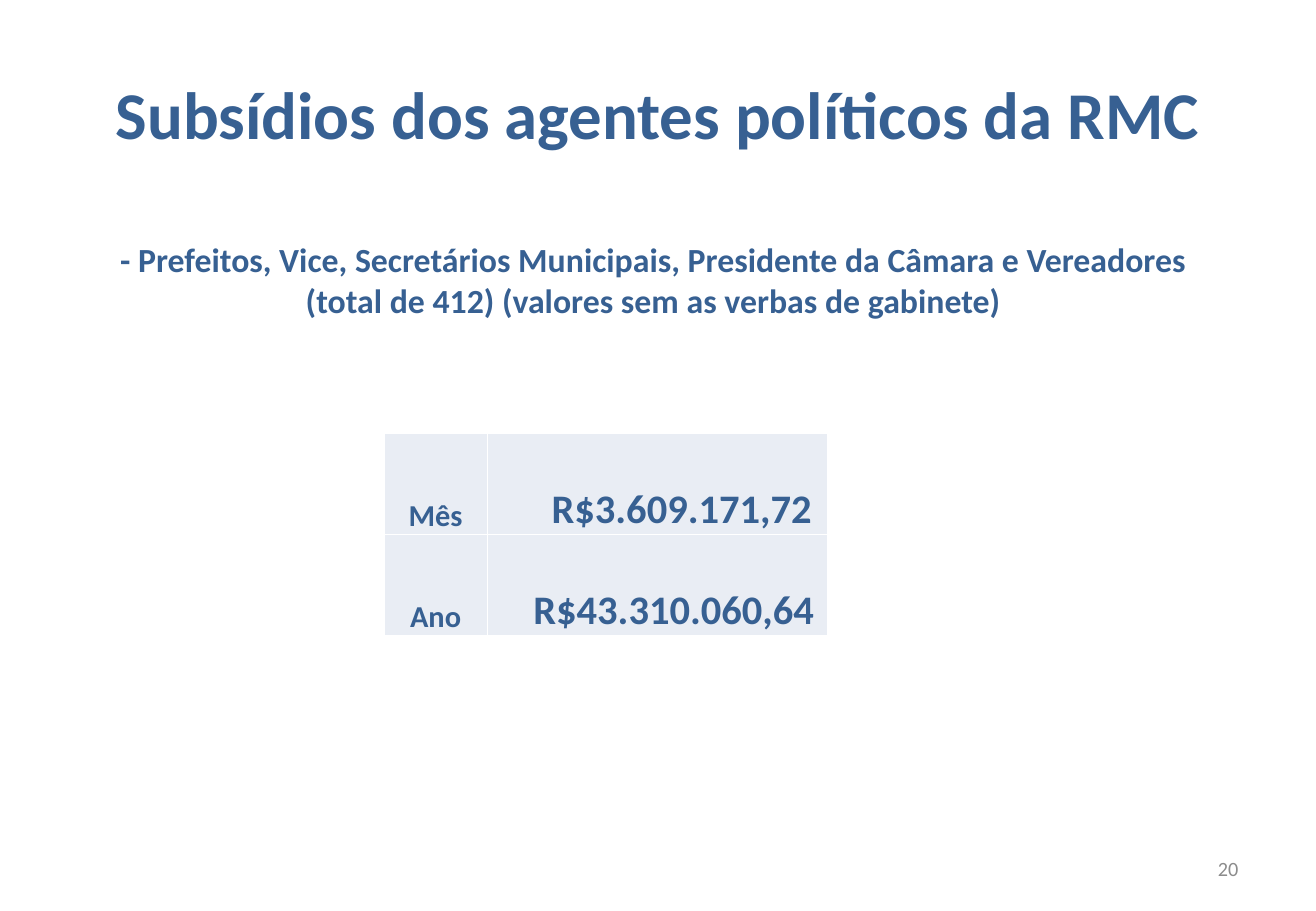
from dataclasses import dataclass

from lxml import etree
from pptx import Presentation
from pptx.dml import color
from pptx.enum import text
from pptx.oxml import ns
from pptx.util import Inches, Pt

BLUE = color.RGBColor(0x37, 0x60, 0x92)
GRAY = color.RGBColor(0x8C, 0x8C, 0x8C)
PALE = color.RGBColor(0xE9, 0xED, 0xF4)
WHITE = color.RGBColor(0xFF, 0xFF, 0xFF)
LEFT, MID, RIGHT = text.PP_ALIGN.LEFT, text.PP_ALIGN.CENTER, text.PP_ALIGN.RIGHT


@dataclass
class Line:
    words: str
    size: float
    align: text.PP_ALIGN = MID
    bold: bool = True
    tint: color.RGBColor = BLUE


@dataclass
class Box:
    left: float
    top: float
    width: float
    height: float
    lines: list[Line]
    frame: dict


@dataclass
class Cell:
    line: Line
    indent: float = 0.01


CENTERED = {"word_wrap": True, "vertical_anchor": text.MSO_ANCHOR.MIDDLE}
FITTED = {"word_wrap": False, "auto_size": text.MSO_AUTO_SIZE.SHAPE_TO_FIT_TEXT}

BOXES = [
    Box(0.54, 0.3, 9.75, 1.25,
        [Line("Subsídios dos agentes políticos da RMC", 39.6)], CENTERED),
    Box(0.89, 1.92, 9.05, 0.77, [
        Line("- Prefeitos, Vice, Secretários Municipais, "
             "Presidente da Câmara e Vereadores", 20, LEFT),
        Line("(total de 412) (valores sem as verbas de gabinete)", 20),
    ], FITTED),
    Box(7.76, 6.95, 2.53, 0.4, [Line("20", 12, RIGHT, False, GRAY)], CENTERED),
]
COLS = [0.85, 2.8]
ROW = 0.83
CELLS = [
    [Cell(Line("Mês", 18)), Cell(Line("R$3.609.171,72", 24, LEFT), 0.53)],
    [Cell(Line("Ano", 18)), Cell(Line("R$43.310.060,64", 24, LEFT), 0.38)],
]


def apply(target, values: dict) -> None:
    for name, value in values.items():
        setattr(target, name, value)


def write(frame, lines: list[Line]) -> None:
    for i, line in enumerate(lines):
        para = frame.add_paragraph() if i else frame.paragraphs[0]
        para.alignment = line.align
        run = para.add_run()
        run.text = line.words
        apply(run.font, {"name": "Calibri", "size": Pt(line.size), "bold": line.bold})
        run.font.color.rgb = line.tint


def draw_box(slide, box: Box) -> None:
    sides = map(Inches, (box.left, box.top, box.width, box.height))
    frame = slide.shapes.add_textbox(*sides).text_frame
    apply(frame, box.frame)
    write(frame, box.lines)


def edge(cell) -> None:
    props = cell._tc.get_or_add_tcPr()
    for i, side in enumerate(("lnL", "lnR", "lnT", "lnB")):
        rule = etree.Element(ns.qn(f"a:{side}"), w=str(Pt(1)))
        fill = etree.SubElement(rule, ns.qn("a:solidFill"))
        etree.SubElement(fill, ns.qn("a:srgbClr"), val=str(WHITE))
        props.insert(i, rule)


def draw_table(slide, left: float, top: float) -> None:
    sides = map(Inches, (left, top, sum(COLS), ROW * len(CELLS)))
    table = slide.shapes.add_table(len(CELLS), len(COLS), *sides).table
    apply(table, {"first_row": False, "horz_banding": False})
    for col, width in zip(table.columns, COLS):
        col.width = Inches(width)
    for r, row in enumerate(CELLS):
        for c, item in enumerate(row):
            cell = table.cell(r, c)
            apply(cell, {
                "margin_left": Inches(item.indent),
                "margin_right": Inches(0.01),
                "margin_top": Inches(0.01),
                "margin_bottom": 0,
                "vertical_anchor": text.MSO_ANCHOR.BOTTOM,
            })
            cell.fill.solid()
            cell.fill.fore_color.rgb = PALE
            edge(cell)
            write(cell.text_frame, [item.line])


def main() -> None:
    deck = Presentation()
    apply(deck, {"slide_width": Inches(10.83), "slide_height": Inches(7.5)})
    slide = deck.slides.add_slide(deck.slide_layouts[6])
    for box in BOXES:
        draw_box(slide, box)
    draw_table(slide, 3.16, 3.57)
    deck.save("out.pptx")


if __name__ == "__main__":
    main()
